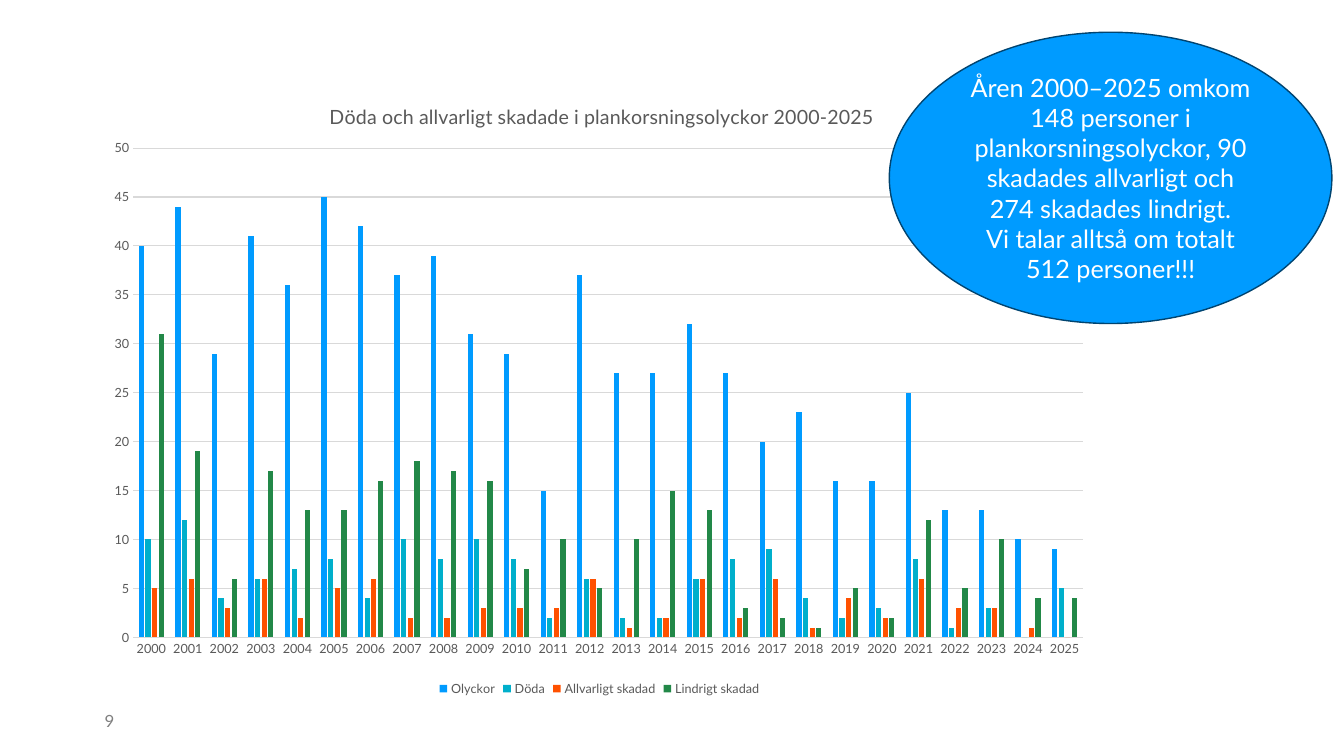
from lxml.etree import SubElement
from pptx import Presentation
from pptx.chart.data import CategoryChartData
from pptx.dml.color import RGBColor
from pptx.enum.chart import XL_CHART_TYPE, XL_LEGEND_POSITION, XL_TICK_MARK
from pptx.enum.shapes import MSO_SHAPE
from pptx.enum.text import MSO_ANCHOR, PP_ALIGN
from pptx.oxml.ns import qn
from pptx.util import Inches, Pt

WIDTH, HEIGHT = 13.33, 7.5
FONT = "Lato"
COLORS = {
    "blue": "009BFF",
    "navy": "004470",
    "teal": "00AFCB",
    "orange": "FF5100",
    "green": "228848",
    "white": "FFFFFF",
    "number": "808080",
    "label": "595959",
    "grid": "D9D9D9",
}
YEARS = [str(year) for year in range(2000, 2026)]
CASUALTIES = [
    ("Olyckor", "blue", [40, 44, 29, 41, 36, 45, 42, 37, 39, 31, 29, 15, 37,
                         27, 27, 32, 27, 20, 23, 16, 16, 25, 13, 13, 10, 9]),
    ("Döda", "teal", [10, 12, 4, 6, 7, 8, 4, 10, 8, 10, 8, 2, 6,
                      2, 2, 6, 8, 9, 4, 2, 3, 8, 1, 3, 0, 5]),
    ("Allvarligt skadad", "orange", [5, 6, 3, 6, 2, 5, 6, 2, 2, 3, 3, 3, 6,
                                     1, 2, 6, 2, 6, 1, 4, 2, 6, 3, 3, 1, 0]),
    ("Lindrigt skadad", "green", [31, 19, 6, 17, 13, 13, 16, 18, 17, 16, 7, 10, 5,
                                  10, 15, 13, 3, 2, 1, 5, 2, 12, 5, 10, 4, 4]),
]


def rgb(name):
    return RGBColor.from_string(COLORS[name])


def share(left, top, width, height):
    return [Inches(part * side) for part, side in
            zip((left, top, width, height), (WIDTH, HEIGHT) * 2)]


def style_font(font, size, color):
    font.name = FONT
    font.size = Pt(size)
    font.bold = False
    font.color.rgb = rgb(color)


def style_line(line, color, width):
    line.color.rgb = rgb(color)
    line.width = Pt(width)


def write(frame, *lines, size, color, align=PP_ALIGN.LEFT):
    for index, text in enumerate(lines):
        paragraph = frame.paragraphs[0] if index == 0 else frame.add_paragraph()
        paragraph.alignment = align
        run = paragraph.add_run()
        run.text = text
        style_font(run.font, size, color)


def place(element, **settings):
    layout = element.find(qn("c:layout"))
    if layout is None:
        layout = element.get_or_add_layout()
    manual = SubElement(layout, qn("c:manualLayout"))
    for tag, value in settings.items():
        SubElement(manual, qn(f"c:{tag}")).set("val", str(value))


def style_axis(axis):
    axis.major_tick_mark = XL_TICK_MARK.NONE
    axis.minor_tick_mark = XL_TICK_MARK.NONE
    style_font(axis.tick_labels.font, 9, "label")


def add_casualty_chart(slide):
    statistics = CategoryChartData()
    statistics.categories = YEARS
    for name, _, counts in CASUALTIES:
        statistics.add_series(name, counts)
    chart = slide.shapes.add_chart(
        XL_CHART_TYPE.COLUMN_CLUSTERED, *share(0.0705, 0.1, 0.751, 0.8267), statistics).chart
    style_font(chart.font, 10, "label")

    chart.has_title = True
    write(chart.chart_title.text_frame,
          "Döda och allvarligt skadade i plankorsningsolyckor 2000-2025",
          size=14, color="label", align=PP_ALIGN.CENTER)
    chart.chart_title.include_in_layout = False
    place(chart.chart_title._element, xMode="edge", yMode="edge", x=0.229, y=0.037)

    chart.has_legend = True
    chart.legend.position = XL_LEGEND_POSITION.BOTTOM
    chart.legend.include_in_layout = False
    style_font(chart.legend.font, 9, "label")

    years, counts = chart.category_axis, chart.value_axis
    style_axis(years)
    style_axis(counts)
    style_line(years.format.line, "grid", 0.75)
    counts.format.line.fill.background()
    counts.minimum_scale, counts.maximum_scale, counts.major_unit = 0, 50, 5
    style_line(counts.major_gridlines.format.line, "grid", 0.75)

    columns = chart.plots[0]
    columns.gap_width, columns.overlap = 219, -27
    columns.vary_by_categories = False
    for series, (_, color, _) in zip(columns.series, CASUALTIES):
        series.format.fill.solid()
        series.format.fill.fore_color.rgb = rgb(color)
        series.invert_if_negative = False
    plot_area = chart._chartSpace.chart.plotArea
    if plot_area.find(qn("c:layout")) is None:
        plot_area.insert(0, plot_area.makeelement(qn("c:layout")))
    place(plot_area, layoutTarget="inner", xMode="edge", yMode="edge",
          x=0.038, y=0.116, w=0.941, h=0.783)


def add_callout(slide, *lines):
    callout = slide.shapes.add_shape(MSO_SHAPE.OVAL, *share(0.6617, 0.0427, 0.3293, 0.3853))
    callout.shadow.inherit = False
    callout.fill.solid()
    callout.fill.fore_color.rgb = rgb("blue")
    style_line(callout.line, "navy", 1)
    frame = callout.text_frame
    frame.word_wrap = True
    frame.vertical_anchor = MSO_ANCHOR.MIDDLE
    write(frame, *lines, size=18, color="white", align=PP_ALIGN.CENTER)


def add_page_number(slide, number):
    frame = slide.shapes.add_textbox(*share(0.0705, 0.9267, 0.0458, 0.0533)).text_frame
    frame.word_wrap = True
    frame.vertical_anchor = MSO_ANCHOR.MIDDLE
    write(frame, number, size=12, color="number")


def main():
    deck = Presentation()
    deck.slide_width, deck.slide_height = Inches(WIDTH), Inches(HEIGHT)
    slide = deck.slides.add_slide(deck.slide_layouts[6])
    add_page_number(slide, "9")
    add_casualty_chart(slide)
    add_callout(
        slide,
        "Åren 2000–2025 omkom 148 personer i plankorsningsolyckor, "
        "90 skadades allvarligt och 274 skadades lindrigt.",
        "Vi talar alltså om totalt 512 personer!!!")
    deck.save("out.pptx")


if __name__ == "__main__":
    main()
